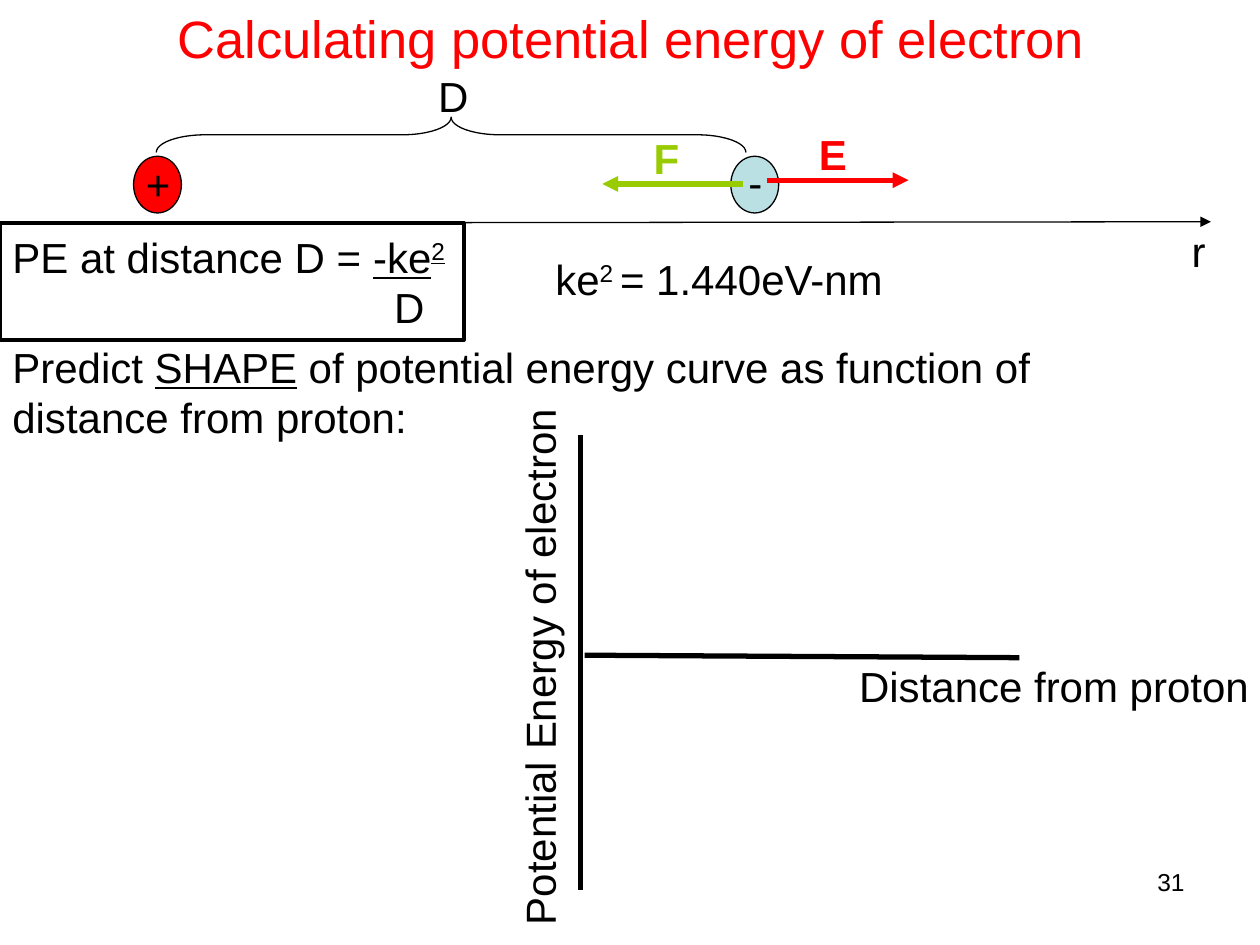
from lxml.etree import SubElement
from pptx import Presentation
from pptx.dml.color import RGBColor
from pptx.enum.shapes import MSO_CONNECTOR as Connector, MSO_SHAPE as Shape
from pptx.enum.text import MSO_ANCHOR as Anchor, PP_ALIGN as Align
from pptx.oxml.ns import qn
from pptx.util import Inches, Pt

COLUMNS, ROWS = 100, 75
COLORS = {
    "black": "000000",
    "red": "FF0000",
    "green": "99CC00",
    "pale_blue": "BBE0E3",
}


class SlideBuilder:
    font = "Arial"
    size = 24

    def __init__(self, presentation):
        self.slide = presentation.slides.add_slide(presentation.slide_layouts[5])
        self.column = presentation.slide_width / COLUMNS
        self.row = presentation.slide_height / ROWS

    def box(self, left, top, width, height):
        return (round(left * self.column), round(top * self.row),
                round(width * self.column), round(height * self.row))

    def color(self, name):
        return RGBColor.from_string(COLORS[name])

    def run(self, paragraph, text, color="black", size=None, bold=False,
            underline=False, superscript=False):
        run = paragraph.add_run()
        run.text = text
        font = run.font
        font.name, font.size = self.font, Pt(size or self.size)
        font.bold, font.underline = bold, underline
        font.color.rgb = self.color(color)
        if superscript:
            font._element.set("baseline", "30000")

    def title(self, text, box, color, size):
        title = self.slide.shapes.title
        title.left, title.top, title.width, title.height = self.box(*box)
        frame = title.text_frame
        frame.vertical_anchor = Anchor.MIDDLE
        frame.paragraphs[0].alignment = Align.CENTER
        self.run(frame.paragraphs[0], text, color, size)

    def text(self, box, *runs, wrap=False, align=Align.LEFT, rotation=0):
        shape = self.slide.shapes.add_textbox(*self.box(*box))
        shape.rotation = rotation
        shape.text_frame.word_wrap = wrap
        paragraph = shape.text_frame.paragraphs[0]
        paragraph.alignment = align
        for text, style in runs:
            self.run(paragraph, text, **style)

    def shape(self, kind, box, fill=None, weight=0.75, rotation=0):
        shape = self.slide.shapes.add_shape(kind, *self.box(*box))
        shape.shadow.inherit = False
        shape.rotation = rotation
        if fill:
            shape.fill.solid()
            shape.fill.fore_color.rgb = self.color(fill)
        else:
            shape.fill.background()
        shape.line.color.rgb = self.color("black")
        shape.line.width = Pt(weight)
        return shape

    def line(self, start, end, color="black", weight=3, arrow=False):
        connector = self.slide.shapes.add_connector(
            Connector.STRAIGHT, *self.box(*start, *end))
        connector.line.color.rgb = self.color(color)
        connector.line.width = Pt(weight)
        if arrow:
            SubElement(connector.line._get_or_add_ln(), qn("a:tailEnd"), type="triangle")
        SubElement(connector._element.spPr, qn("a:effectLst"))

    def charge(self, left, fill, sign, sign_box):
        self.shape(Shape.OVAL, (left, 12.4, 3.8, 4.5), fill)
        self.text(sign_box, (sign, {}))

    def formula(self, box, numerator_runs, denominator, indent):
        shape = self.shape(Shape.RECTANGLE, box, weight=2.25)
        frame = shape.text_frame
        frame.word_wrap = False
        top, bottom = frame.paragraphs[0], frame.add_paragraph()
        top.alignment = bottom.alignment = Align.LEFT
        for text, style in numerator_runs:
            self.run(top, text, **style)
        bottom._p.get_or_add_pPr().set("marL", str(round(indent * self.column)))
        self.run(bottom, denominator)


def main():
    presentation = Presentation()
    presentation.slide_width, presentation.slide_height = Inches(10), Inches(7.5)
    builder = SlideBuilder(presentation)

    builder.text((71.7, 68.3, 23.3, 5.2), ("31", {"size": 14}),
                 wrap=True, align=Align.RIGHT)
    builder.title("Calculating potential energy of electron",
                  (5.1, 0, 90, 5.9), "red", 30)

    builder.charge(10.6, "red", "+", (10.6, 12.1, 4, 5))
    builder.charge(58, "pale_blue", "-", (58.4, 11.9, 3.1, 5))

    builder.line((60.9, 14.3), (72.1, 14.3), "red", arrow=True)
    builder.text((64, 9.7, 4.2, 5), ("E", {"color": "red", "bold": True}))
    builder.line((59, 14.6), (47.8, 14.6), "green", arrow=True)
    builder.text((50.9, 10, 4, 5), ("F", {"color": "green", "bold": True}))

    builder.line((12.4, 17.7), (96.1, 17.6), weight=0.75, arrow=True)
    builder.text((93.6, 17.4, 6.4, 5), ("r", {}), wrap=True)
    brace = builder.shape(Shape.LEFT_BRACE, (34.4, -12.7, 2.8, 46.8), rotation=90)
    brace.adjustments[0] = 1.39
    builder.text((33.8, 5.1, 4.4, 5), ("D", {}))

    builder.formula((0, 17.7, 36.8, 9.3), [
        ("PE at distance D = ", {}),
        ("-ke", {"underline": True}),
        ("2", {"underline": True, "superscript": True}),
    ], "D", indent=30.3)
    builder.text((43.1, 19.6, 28.4, 5), ("ke", {}),
                 ("2 ", {"superscript": True}), ("= 1.440eV-nm", {}))
    builder.text((0, 26.6, 89.6, 9), ("Predict ", {}), ("SHAPE", {"underline": True}),
                 (" of potential energy curve as function of distance from proton:", {}),
                 wrap=True)

    builder.line((46.4, 52), (80.9, 52.2))
    builder.line((46.1, 34.5), (46.1, 70.6))
    builder.text((67.2, 51.9, 33, 5), ("Distance from proton", {}))
    builder.text((21.3, 50.4, 43, 5), ("Potential Energy of electron", {}), rotation=270)

    presentation.save("out.pptx")


if __name__ == "__main__":
    main()
